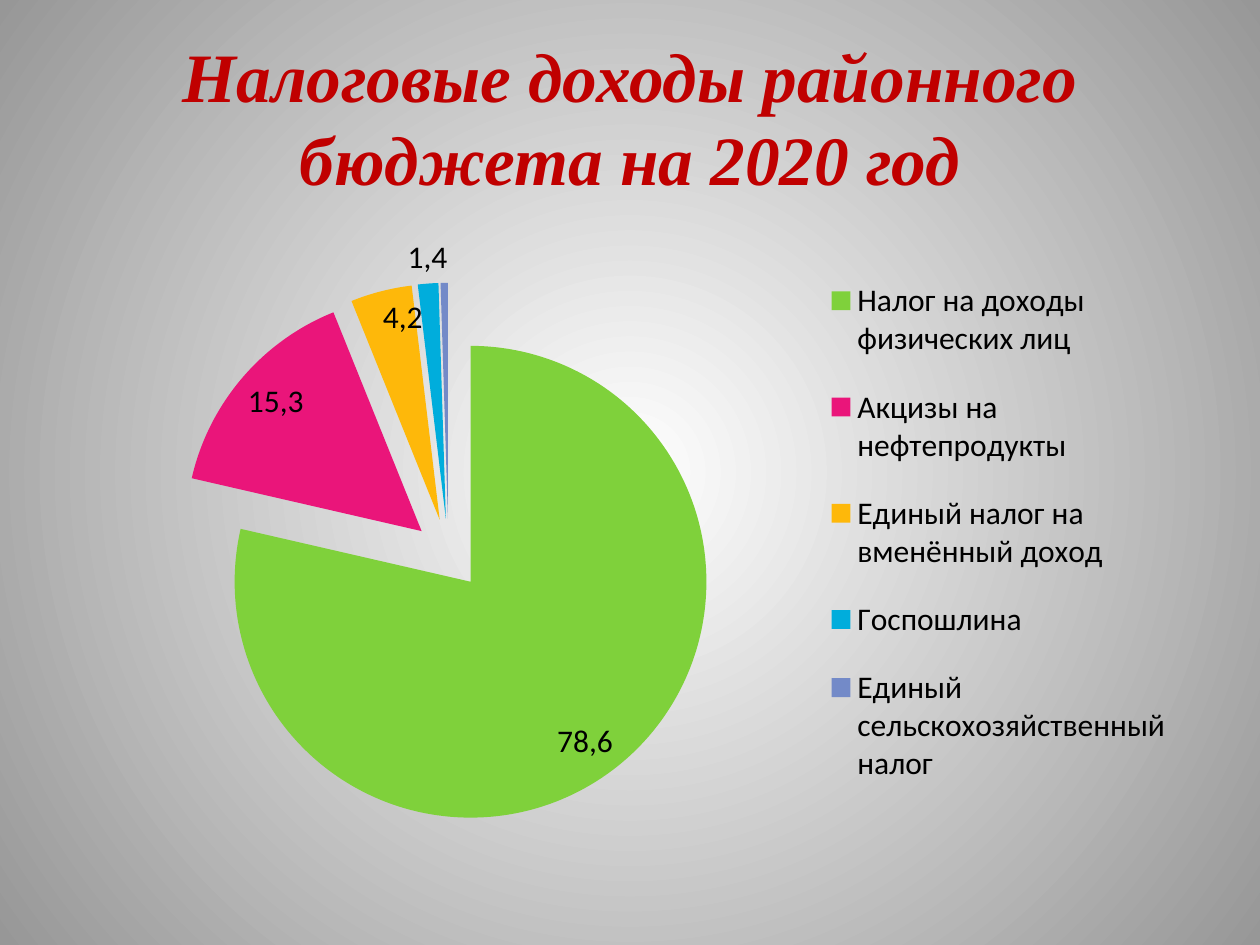
from lxml.etree import SubElement
from pptx import Presentation
from pptx.chart.data import CategoryChartData
from pptx.dml.color import RGBColor
from pptx.enum.chart import XL_CHART_TYPE, XL_LABEL_POSITION, XL_LEGEND_POSITION
from pptx.enum.text import MSO_ANCHOR, PP_ALIGN
from pptx.oxml import parse_xml
from pptx.oxml.ns import nsdecls, qn
from pptx.util import Pt

INSIDE = XL_LABEL_POSITION.INSIDE_END
OUTSIDE = XL_LABEL_POSITION.OUTSIDE_END
TAXES = [
    ("Налог на доходы физических лиц", 78.6, "7FD13B", INSIDE),
    ("Акцизы на нефтепродукты", 15.3, "EA157A", INSIDE),
    ("Единый налог на вменённый доход", 4.2, "FEB80A", INSIDE),
    ("Госпошлина", 1.4, "00ADDC", OUTSIDE),
    ("Единый сельскохозяйственный налог", 0.5, "738AC8", None),
]


def color(value):
    return RGBColor.from_string(value)


def style_font(font, name, size, value):
    font.name = name
    font.size = Pt(size)
    font.color.rgb = color(value)


def paint_background(slide):
    fill = slide.background.fill
    fill.gradient()
    for stop, value, position in zip(fill.gradient_stops, ("FFFFFF", "979797"), (0, 1)):
        stop.color.rgb = color(value)
        stop.position = position
    gradient = slide.background._cSld.find(".//" + qn("a:gradFill"))
    linear = gradient.find(qn("a:lin"))
    center = parse_xml(
        f'<a:path {nsdecls("a")} path="circle">'
        '<a:fillToRect l="50000" t="50000" r="50000" b="50000"/></a:path>'
    )
    gradient.replace(linear, center)


def add_title(slide, left, top, width, height):
    frame = slide.shapes.add_textbox(Pt(left), Pt(top), Pt(width), Pt(height)).text_frame
    frame.word_wrap = True
    frame.vertical_anchor = MSO_ANCHOR.MIDDLE
    paragraph = frame.paragraphs[0]
    paragraph.text = "Налоговые доходы районного бюджета на 2020 год"
    paragraph.alignment = PP_ALIGN.CENTER
    style_font(paragraph.font, "Times New Roman", 39.6, "C00000")
    paragraph.font.bold = True
    paragraph.font.italic = True


def set_layout(layout, left, top, width, height, inner=False):
    manual = SubElement(layout, qn("c:manualLayout"))
    settings = [("layoutTarget", "inner")] if inner else []
    settings += [("xMode", "edge"), ("yMode", "edge")]
    settings += [("x", left), ("y", top), ("w", width), ("h", height)]
    for name, value in settings:
        SubElement(manual, qn("c:" + name)).set("val", str(value))


def add_layout(parent, position, *box, inner=False):
    for existing in parent.findall(qn("c:layout")):
        parent.remove(existing)
    layout = parse_xml(f'<c:layout {nsdecls("c")}/>')
    parent.insert(position, layout)
    set_layout(layout, *box, inner=inner)


def label_point(point, value, position):
    label = point.data_label
    run = label.text_frame.paragraphs[0].add_run()
    run.text = str(value).replace(".", ",")
    style_font(run.font, "Calibri", 18, "000000")
    label.position = position


def hide_label(labels, index):
    entry = parse_xml(
        f'<c:dLbl {nsdecls("c")}><c:idx val="{index}"/><c:delete val="1"/></c:dLbl>'
    )
    element = labels._element
    element.insert(len(element.findall(qn("c:dLbl"))), entry)


def add_tax_chart(slide, left, top, width, height):
    data = CategoryChartData()
    data.categories = [tax[0] for tax in TAXES]
    data.add_series("Series 1", [tax[1] for tax in TAXES])
    chart = slide.shapes.add_chart(
        XL_CHART_TYPE.PIE_EXPLODED, Pt(left), Pt(top), Pt(width), Pt(height), data
    ).chart
    style_font(chart.font, "Calibri", 18, "000000")
    chart.has_title = False
    chart.has_legend = True
    chart.legend.position = XL_LEGEND_POSITION.RIGHT
    chart.legend.include_in_layout = False
    add_layout(chart.legend._element, 1, 0.66, 0.05, 0.33, 0.9)
    add_layout(chart._chartSpace.chart.plotArea, 0, 0.1, 0.1, 0.48, 0.87, inner=True)

    plot = chart.plots[0]
    plot.vary_by_categories = True
    series = plot.series[0]
    series._element.find(qn("c:explosion")).set("val", "15")
    labels = series.data_labels
    labels.show_value = True
    style_font(labels.font, "Calibri", 18, "000000")
    for index, (_, value, fill, position) in enumerate(TAXES):
        point = series.points[index]
        point.format.fill.solid()
        point.format.fill.fore_color.rgb = color(fill)
        explosion = parse_xml(f'<c:explosion {nsdecls("c")} val="15"/>')
        point.format._element.find(qn("c:spPr")).addprevious(explosion)
        if position is None:
            hide_label(labels, index)
        else:
            label_point(point, value, position)


def main():
    presentation = Presentation()
    presentation.slide_width = Pt(720)
    presentation.slide_height = Pt(540)
    slide = presentation.slides.add_slide(presentation.slide_layouts[6])
    paint_background(slide)
    add_title(slide, 36, 21.6, 648, 90)
    add_tax_chart(slide, 36, 126, 648, 356.4)
    presentation.save("out.pptx")


if __name__ == "__main__":
    main()
